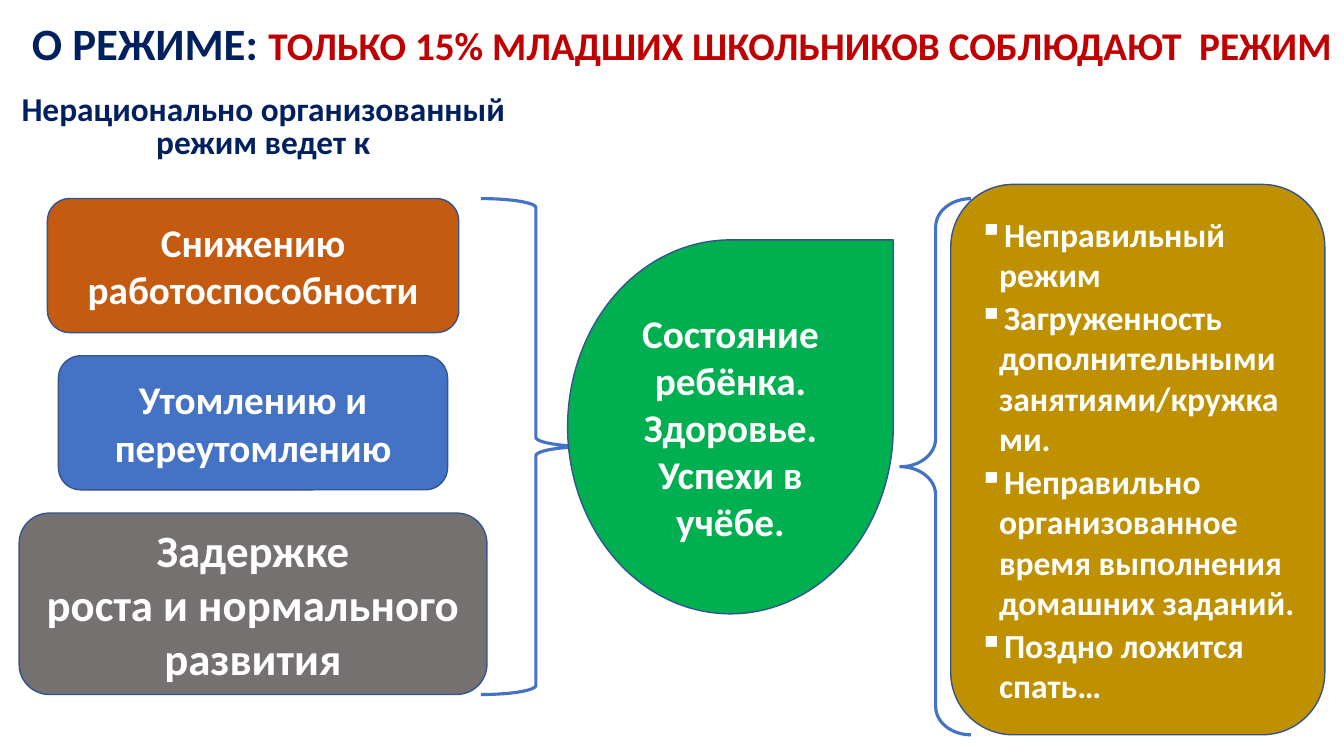
import pptx
import pptx.util
import pptx.dml.color
import pptx.enum.shapes
import pptx.enum.text
from lxml import etree

PX = 9144
FONT = "Calibri"
COLORS = {
    "navy": "002060",
    "red": "C00000",
    "white": "FFFFFF",
    "outline": "325491",
    "blue": "4472C4",
    "orange": "C55A11",
    "grey": "767171",
    "green": "00B050",
    "gold": "BF9000",
}
SHAPES = pptx.enum.shapes.MSO_SHAPE
CENTER = pptx.enum.text.PP_ALIGN.CENTER
LEFT = pptx.enum.text.PP_ALIGN.LEFT


def px(box):
    """Turn a box of pixels into EMU lengths."""
    return [pptx.util.Emu(length * PX) for length in box]


def rgb(name):
    """Look up a named colour."""
    return pptx.dml.color.RGBColor.from_string(COLORS[name])


def style_font(font, size, color):
    """Set the bold slide font at a size and colour."""
    font.name = FONT
    font.size = pptx.util.Pt(size)
    font.bold = True
    font.color.rgb = rgb(color)


def write_lines(frame, lines, size, color, align=CENTER):
    """Write one paragraph per line, middle-anchored, and return the paragraphs."""
    frame.word_wrap = True
    frame.vertical_anchor = pptx.enum.text.MSO_ANCHOR.MIDDLE
    for index, line in enumerate(lines):
        paragraph = frame.paragraphs[0] if index == 0 else frame.add_paragraph()
        paragraph.text = line
        paragraph.alignment = align
        style_font(paragraph.font, size, color)
    return frame.paragraphs


def add_title(slide, box):
    """Place the two-coloured title."""
    frame = slide.shapes.add_textbox(*px(box)).text_frame
    title = write_lines(frame, ["О РЕЖИМЕ: "], 32, "navy")[0]
    title.line_spacing = 1.1
    statistic = title.add_run()
    statistic.text = "ТОЛЬКО 15% МЛАДШИХ ШКОЛЬНИКОВ СОБЛЮДАЮТ  РЕЖИМ"
    style_font(statistic.font, 28, "red")


def add_lead(slide, box):
    """Place the heading above the consequences."""
    frame = slide.shapes.add_textbox(*px(box)).text_frame
    lines = ["Нерационально организованный", "режим ведет к"]
    for paragraph in write_lines(frame, lines, 23.8, "navy"):
        paragraph.line_spacing = pptx.util.Pt(24)


def add_panel(slide, kind, box, fill):
    """Place a filled shape with a thin outline."""
    panel = slide.shapes.add_shape(kind, *px(box))
    panel.shadow.inherit = False
    panel.fill.solid()
    panel.fill.fore_color.rgb = rgb(fill)
    panel.line.color.rgb = rgb("outline")
    panel.line.width = pptx.util.Pt(1)
    return panel


def add_brace(slide, box):
    """Place an unfilled blue brace that points right."""
    brace = slide.shapes.add_shape(SHAPES.RIGHT_BRACE, *px(box))
    brace.shadow.inherit = False
    brace.fill.background()
    brace.line.color.rgb = rgb("blue")
    brace.line.width = pptx.util.Pt(2.25)
    return brace


def add_consequences(slide, box):
    """Stack the consequence panels, centred in the box, and brace them."""
    left, top, width, height = box
    consequences = [
        (["Снижению работоспособности"], 28, "orange", 408, 133),
        (["Утомлению и переутомлению"], 28, "blue", 386, 133),
        (["Задержке", "роста и нормального", "развития"], 32, "grey", 464, 180),
    ]
    gap = (height - sum(row[-1] for row in consequences)) // (len(consequences) - 1)
    panel_top = top
    for lines, size, fill, panel_width, panel_height in consequences:
        panel_left = left + (width - panel_width) // 2
        panel = add_panel(slide, SHAPES.ROUNDED_RECTANGLE,
                          (panel_left, panel_top, panel_width, panel_height), fill)
        write_lines(panel.text_frame, lines, size, "white")
        panel_top += panel_height + gap
    add_brace(slide, (left + width - 6, top, 109, height))


def add_child_state(slide, box):
    """Place the central teardrop about the child's state."""
    drop = add_panel(slide, SHAPES.TEAR, box, "green")
    lines = ["Состояние ребёнка.", "Здоровье.", "Успехи в учёбе."]
    write_lines(drop.text_frame, lines, 28, "white")


def add_bullet(paragraph):
    """Give a paragraph a square bullet with a hanging indent."""
    properties = paragraph._p.get_or_add_pPr()
    indent = 20 * PX
    properties.set("marL", str(indent))
    properties.set("indent", str(-indent))
    bullet = etree.SubElement(properties, pptx.oxml.ns.qn("a:buChar"))
    bullet.set("char", "▪")
    properties.insert_element_before(bullet, "a:tabLst", "a:defRPr", "a:extLst")


def add_causes(slide, box):
    """Place the bulleted causes panel and the brace on its left."""
    left, top, width, height = box
    brace = add_brace(slide, (left - 50, top + 14, 70, height - 14))
    brace.rotation = 180
    brace.adjustments[0] = 0.4
    panel = add_panel(slide, SHAPES.ROUNDED_RECTANGLE, box, "gold")
    causes = [
        "Неправильный режим",
        "Загруженность дополнительными занятиями/кружками.",
        "Неправильно организованное время выполнения домашних заданий.",
        "Поздно ложится спать…",
    ]
    for paragraph in write_lines(panel.text_frame, causes, 24, "white", LEFT):
        paragraph.space_before = paragraph.space_after = pptx.util.Pt(1)
        add_bullet(paragraph)


def main():
    """Build and save the slide about daily routine."""
    deck = pptx.Presentation()
    deck.slide_width, deck.slide_height = px((1333, 750))
    slide = deck.slides.add_slide(deck.slide_layouts[6])
    add_title(slide, (19, 4, 1314, 72))
    add_consequences(slide, (19, 197, 464, 492))
    add_child_state(slide, (563, 238, 323, 371))
    add_lead(slide, (6, 76, 510, 102))
    add_causes(slide, (943, 183, 371, 546))
    deck.save("out.pptx")


if __name__ == "__main__":
    main()
